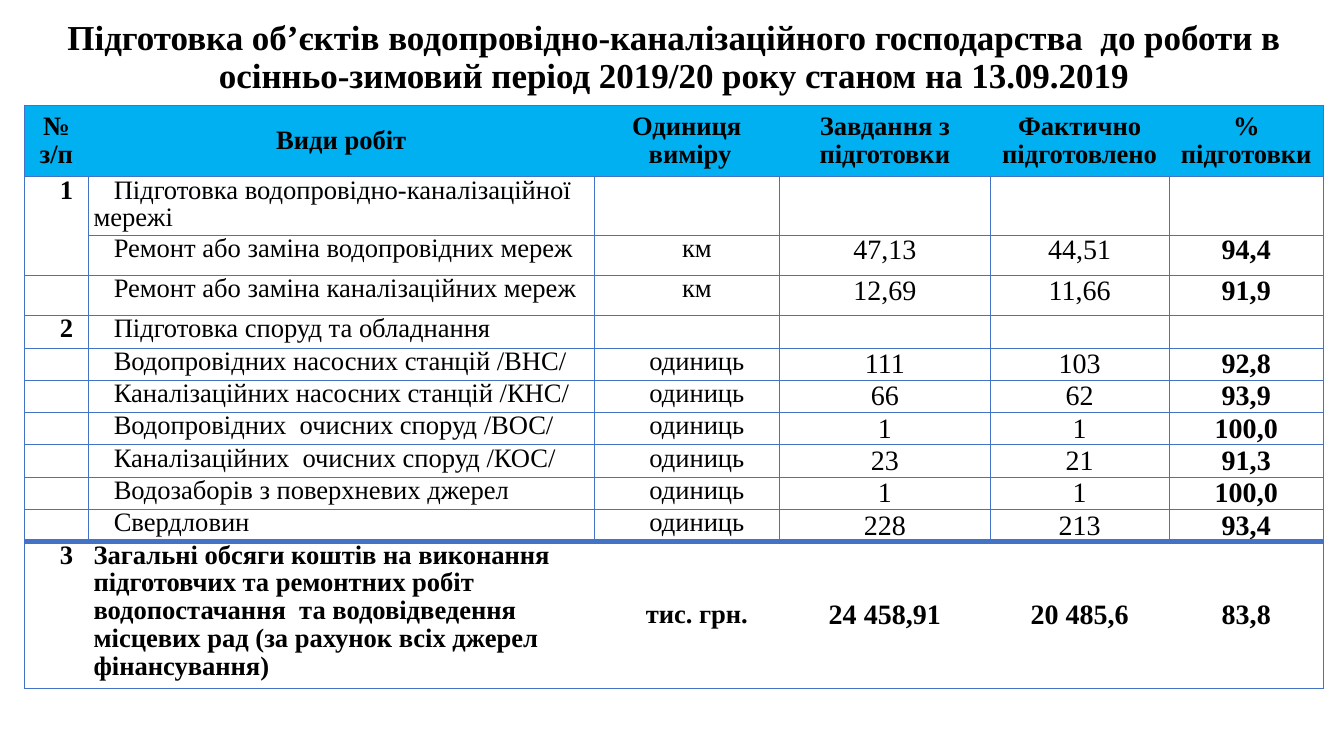
from lxml import etree
from pptx import Presentation
from pptx.dml.color import RGBColor
from pptx.enum.text import MSO_ANCHOR, MSO_AUTO_SIZE, PP_ALIGN
from pptx.oxml.ns import qn
from pptx.util import Pt

LEFT, CENTER = PP_ALIGN.LEFT, PP_ALIGN.CENTER
TOP, MIDDLE = MSO_ANCHOR.TOP, MSO_ANCHOR.MIDDLE
NO_FIT = MSO_AUTO_SIZE.NONE

TITLE = ("Підготовка об’єктів водопровідно-каналізаційного господарства  "
         "до роботи в осінньо-зимовий період 2019/20 року станом на 13.09.2019")
WIDTHS = [46, 361, 132.6, 150.4, 128, 110]
HEIGHTS = [51.2, 41.6, 28.8, 28.8] + [23.1] * 7 + [104.4]
ROWS = [
    ["№ з/п", "Види робіт", "Одиниця\n виміру", "Завдання з підготовки",
     "Фактично підготовлено", "%\nпідготовки"],
    ["1", "Підготовка водопровідно-каналізаційної мережі", "", "", "", ""],
    ["", "Ремонт або заміна водопровідних мереж", "км", "47,13", "44,51", "94,4"],
    ["", "Ремонт або заміна каналізаційних мереж", "км", "12,69", "11,66", "91,9"],
    ["2", "Підготовка споруд та обладнання", "", "", "", ""],
    ["", "Водопровідних насосних станцій /ВНС/", "одиниць", "111", "103", "92,8"],
    ["", "Каналізаційних насосних станцій /КНС/", "одиниць", "66", "62", "93,9"],
    ["", "Водопровідних  очисних споруд /ВОС/", "одиниць", "1", "1", "100,0"],
    ["", "Каналізаційних  очисних споруд /КОС/", "одиниць", "23", "21", "91,3"],
    ["", "Водозаборів з поверхневих джерел", "одиниць", "1", "1", "100,0"],
    ["", "Свердловин", "одиниць", "228", "213", "93,4"],
    ["3", "Загальні обсяги коштів на виконання підготовчих та ремонтних робіт "
     "водопостачання  та водовідведення місцевих рад (за рахунок всіх джерел "
     "фінансування)", "тис. грн.", "24 458,91", "20 485,6", "83,8"],
]
LAST_ROW, LAST_COL = len(ROWS) - 1, len(WIDTHS) - 1


def color(code):
    return RGBColor.from_string(code)


class Sheet:
    font, ink, paper = "Times New Roman", "000000", "FFFFFF"
    head, rule = "00B0F0", "4472C4"

    def __init__(self, slide):
        self.slide = slide

    def style(self, par, size, bold, align=CENTER, space=1.0, indent=0):
        par.alignment = align
        par.line_spacing = space
        if indent:
            props = par._p.get_or_add_pPr()
            props.set("marL", "0")
            props.set("indent", str(Pt(indent)))
        par.font.name = self.font
        par.font.size = Pt(size)
        par.font.bold = bold
        par.font.color.rgb = color(self.ink)

    def title(self, text, x, y, w, h):
        box = self.slide.shapes.title
        box.left, box.top, box.width, box.height = Pt(x), Pt(y), Pt(w), Pt(h)
        frame = box.text_frame
        frame.text = text
        frame.word_wrap = True
        frame.auto_size = NO_FIT
        frame.vertical_anchor = MIDDLE
        self.style(frame.paragraphs[0], 25, True, space=0.9)

    def edges(self, cell, widths):
        """Draw left, right, top and bottom borders; zero hides one."""
        props = cell._tc.get_or_add_tcPr()
        for i, (side, width) in enumerate(zip("LRTB", widths)):
            line = etree.Element(qn(f"a:ln{side}"), w=str(Pt(width)))
            if width:
                fill = etree.SubElement(line, qn("a:solidFill"))
                etree.SubElement(fill, qn("a:srgbClr"), val=self.rule)
            else:
                etree.SubElement(line, qn("a:noFill"))
            props.insert(i, line)

    def cell(self, cell, text, row, col):
        head, total = row == 0, row == LAST_ROW
        value = col > 2 and not head
        cell.text = text
        cell.margin_left = cell.margin_right = Pt(3.6)
        cell.margin_top = cell.margin_bottom = 0
        mid = head or (total and col > 1) or (row > 4 and value)
        cell.vertical_anchor = MIDDLE if mid else TOP
        cell.fill.solid()
        cell.fill.fore_color.rgb = color(self.head if head else self.paper)
        name = col == 1 and not head
        indent = 0 if head or value or (total and name) else 14.4
        for par in cell.text_frame.paragraphs:
            self.style(par, 20 if value and text else 19,
                       head or total or col in (0, LAST_COL),
                       LEFT if name else CENTER,
                       1.0 if value else 0.95, indent)
        inner = 0 if head or total else 0.5
        self.edges(cell, [inner if col else 0.5,
                          inner if col < LAST_COL else 0.5,
                          4 if total else 0.5,
                          4 if row == LAST_ROW - 1 else 0.5])

    def table(self, rows, x, y, widths, heights):
        table = self.slide.shapes.add_table(
            len(rows), len(widths), Pt(x), Pt(y),
            Pt(sum(widths)), Pt(sum(heights))).table
        table.first_row = table.horz_banding = False
        for column, width in zip(table.columns, widths):
            column.width = Pt(width)
        for line, height in zip(table.rows, heights):
            line.height = Pt(height)
        for r, texts in enumerate(rows):
            for c, text in enumerate(texts):
                self.cell(table.cell(r, c), text, r, c)
        return table


def main():
    deck = Presentation()
    deck.slide_width, deck.slide_height = Pt(960), Pt(540)
    sheet = Sheet(deck.slides.add_slide(deck.slide_layouts[5]))
    sheet.title(TITLE, 17.3, 0, 928, 83.5)
    works = sheet.table(ROWS, 17.3, 75, WIDTHS, HEIGHTS)
    works.cell(1, 0).merge(works.cell(2, 0))
    deck.save("out.pptx")


if __name__ == "__main__":
    main()
